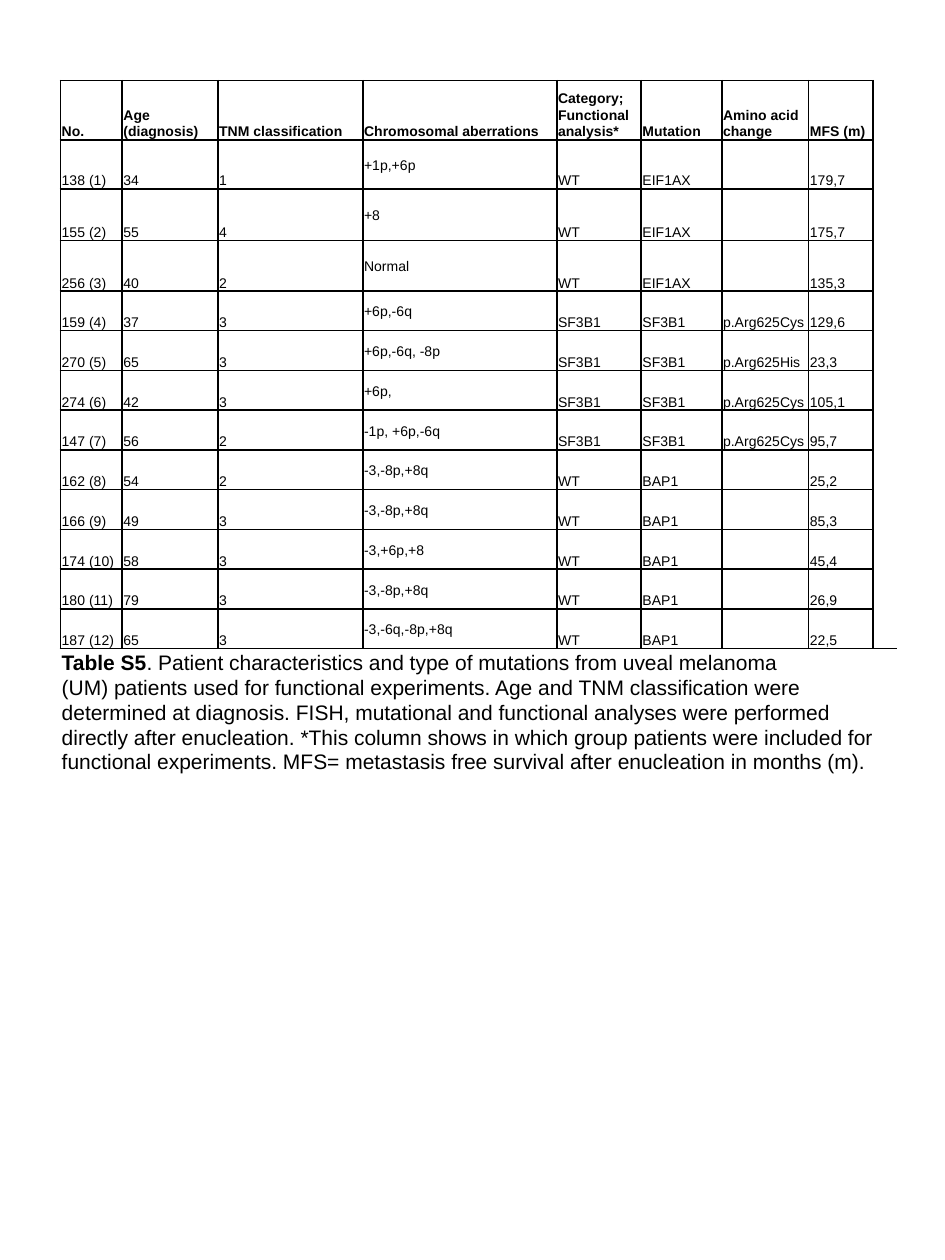
import dataclasses

import lxml.etree
import pptx
import pptx.dml.color
import pptx.enum.text
import pptx.oxml.ns
import pptx.util

Inches = pptx.util.Inches
Anchor = pptx.enum.text.MSO_ANCHOR
PLAIN = "{2D5ABB26-0587-4C30-8999-92F81FD0307C}"


@dataclasses.dataclass
class Theme:
    font: str = "Arial"
    ink: str = "000000"
    small: float = 8
    large: float = 12
    rule: float = 1
    lead: float = 1.06


class Sheet:
    def __init__(self, slide, theme):
        self.slide = slide
        self.theme = theme

    def grid(self, left, top, cols, rows):
        frame = self.slide.shapes.add_table(
            len(rows), len(cols), Inches(left), Inches(top),
            Inches(sum(cols)), Inches(sum(rows)))
        table = frame.table
        table.first_row = table.horz_banding = False
        frame._element.find(".//" + pptx.oxml.ns.qn("a:tableStyleId")).text = PLAIN
        for col, width in zip(table.columns, cols):
            col.width = Inches(width)
        for row, height in zip(table.rows, rows):
            row.height = Inches(height)
        return table

    def edge(self, cell, sides):
        props = cell._tc.get_or_add_tcPr()
        tag = pptx.oxml.ns.qn
        for side in "LRTB":
            shown = side in sides
            width = pptx.util.Pt(self.theme.rule if shown else 0)
            line = lxml.etree.SubElement(props, tag("a:ln" + side), w=str(width))
            if shown:
                fill = lxml.etree.SubElement(line, tag("a:solidFill"))
                lxml.etree.SubElement(fill, tag("a:srgbClr"), val=self.theme.ink)
            else:
                lxml.etree.SubElement(line, tag("a:noFill"))
        cell.fill.background()

    def cell(self, cell, paras, size, anchor=Anchor.BOTTOM, sides="LRTB"):
        self.edge(cell, sides)
        cell.margin_left = cell.margin_right = cell.margin_top = Inches(0.01)
        cell.margin_bottom = 0
        cell.vertical_anchor = anchor
        frame = cell.text_frame
        for i, runs in enumerate(paras):
            para = frame.add_paragraph() if i else frame.paragraphs[0]
            para.line_spacing = self.theme.lead
            for text, bold in runs:
                self.run(para, text, size, bold)

    def run(self, para, text, size, bold):
        run = para.add_run()
        run.text = text
        font = run.font
        font.name = self.theme.font
        font.size = pptx.util.Pt(size)
        font.bold = bold
        font.color.rgb = pptx.dml.color.RGBColor.from_string(self.theme.ink)


HEAD = ["No.", "Age (diagnosis)", "TNM classification", "Chromosomal aberrations",
        "Category; Functional analysis*", "Mutation", "Amino acid change", "MFS (m)"]
DATA = [
    ["138 (1)", "34", "1", "+1p,+6p", "WT", "EIF1AX", "", "179,7"],
    ["155 (2)", "55", "4", "+8", "WT", "EIF1AX", "", "175,7"],
    ["256 (3)", "40", "2", "Normal", "WT", "EIF1AX", "", "135,3"],
    ["159 (4)", "37", "3", "+6p,-6q", "SF3B1", "SF3B1", "p.Arg625Cys", "129,6"],
    ["270 (5)", "65", "3", "+6p,-6q, -8p", "SF3B1", "SF3B1", "p.Arg625His", "23,3"],
    ["274 (6)", "42", "3", "+6p,", "SF3B1", "SF3B1", "p.Arg625Cys", "105,1"],
    ["147 (7)", "56", "2", "-1p, +6p,-6q", "SF3B1", "SF3B1", "p.Arg625Cys", "95,7"],
    ["162 (8)", "54", "2", "-3,-8p,+8q", "WT", "BAP1", "", "25,2"],
    ["166 (9)", "49", "3", "-3,-8p,+8q", "WT", "BAP1", "", "85,3"],
    ["174 (10)", "58", "3", "-3,+6p,+8", "WT", "BAP1", "", "45,4"],
    ["180 (11)", "79", "3", "-3,-8p,+8q", "WT", "BAP1", "", "26,9"],
    ["187 (12)", "65", "3", "-3,-6q,-8p,+8q", "WT", "BAP1", "", "22,5"],
]
NOTE = [
    [("Table S5", True),
     (". Patient characteristics and type of mutations from uveal melanoma", False)],
    [("(UM) patients used for functional experiments. Age and TNM classification "
      "were determined at diagnosis. FISH, mutational and functional analyses were "
      "performed directly after enucleation. *This column shows in which group "
      "patients were included for functional experiments. MFS= metastasis free "
      "survival after enucleation in months (m).", False)],
]
COLS = [0.49, 0.76, 1.15, 1.54, 0.67, 0.64, 0.69, 0.51, 0.19]
ROWS = [0.47, 0.39, 0.41, 0.4] + [2.75 / 9] * 9 + [1.47]


def main():
    deck = pptx.Presentation()
    deck.slide_width, deck.slide_height = Inches(7.5), Inches(10)
    theme = Theme()
    sheet = Sheet(deck.slides.add_slide(deck.slide_layouts[6]), theme)
    table = sheet.grid(0.48, 0.64, COLS, ROWS)
    end = len(COLS) - 1
    for r, texts in enumerate([HEAD] + DATA):
        for c, text in enumerate(texts):
            middle = r > 0 and HEAD[c] == "Chromosomal aberrations"
            paras = [[(text, r == 0)]] if text else []
            sheet.cell(table.cell(r, c), paras, theme.small,
                       Anchor.MIDDLE if middle else Anchor.BOTTOM)
        sides = "LB" if r == len(DATA) else "L"
        sheet.cell(table.cell(r, end), [], theme.small, sides=sides)
    foot = len(ROWS) - 1
    note = table.cell(foot, 0)
    note.merge(table.cell(foot, end))
    for c in range(1, end + 1):
        sheet.edge(table.cell(foot, c), "T")
    sheet.cell(note, NOTE, theme.large, Anchor.TOP, "T")
    deck.save("out.pptx")


if __name__ == "__main__":
    main()
